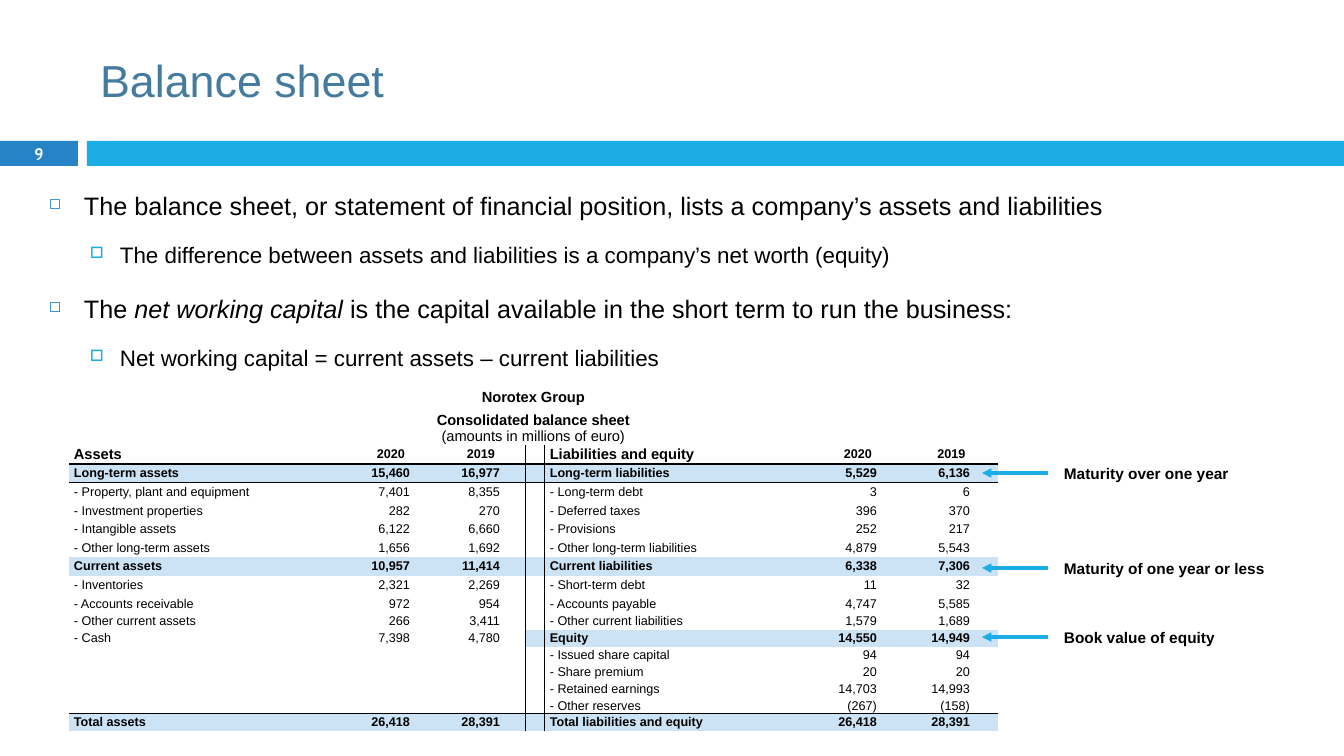
from lxml.etree import SubElement
from pptx import Presentation
from pptx.dml.color import RGBColor
from pptx.enum.shapes import MSO_CONNECTOR, MSO_SHAPE
from pptx.enum.text import MSO_ANCHOR, PP_ALIGN
from pptx.oxml.ns import qn
from pptx.util import Pt

BLUE = RGBColor(0x26, 0x83, 0xC6)
CYAN = RGBColor(0x1C, 0xAD, 0xE4)
TITLE_BLUE = RGBColor(0x45, 0x7B, 0x9E)
PALE = RGBColor(0xCC, 0xE3, 0xF5)
BLACK = RGBColor(0, 0, 0)
WHITE = RGBColor(0xFF, 0xFF, 0xFF)

# Content: (level, [(text, italic), ...])
BULLETS = [
    (0, [("The balance sheet, or statement of financial position, lists a company’s assets and liabilities", False)]),
    (1, [("The difference between assets and liabilities is a company’s net worth (equity)", False)]),
    (0, [("The ", False), ("net working capital ", True),
         ("is the capital available in the short term to run the business:", False)]),
    (1, [("Net working capital = current assets – current liabilities", False)]),
]
# Per level: size, space before, left indent px, hanging px, bullet, its colour and size
LEVELS = [(18, 7, 35, 35, "◻", BLUE, 60), (16, 5.5, 71, 30, "□", CYAN, 70)]

COMPANY = "Norotex Group"
SUBTITLE = ["Consolidated balance sheet", "(amounts in millions of euro)"]
HEADER = ("Assets", "2020", "2019")
HEADER_RIGHT = ("Liabilities and equity", "2020", "2019")
ASSETS = [
    ("Long-term assets", "15,460", "16,977"),
    ("- Property, plant and equipment", "7,401", "8,355"),
    ("- Investment properties", "282", "270"),
    ("- Intangible assets", "6,122", "6,660"),
    ("- Other long-term assets", "1,656", "1,692"),
    ("Current assets", "10,957", "11,414"),
    ("- Inventories", "2,321", "2,269"),
    ("- Accounts receivable", "972", "954"),
    ("- Other current assets", "266", "3,411"),
    ("- Cash", "7,398", "4,780"),
    *[("", "", "")] * 4,
    ("Total assets", "26,418", "28,391"),
]
LIABILITIES = [
    ("Long-term liabilities", "5,529", "6,136"),
    ("- Long-term debt", "3", "6"),
    ("- Deferred taxes", "396", "370"),
    ("- Provisions", "252", "217"),
    ("- Other long-term liabilities", "4,879", "5,543"),
    ("Current liabilities", "6,338", "7,306"),
    ("- Short-term debt", "11", "32"),
    ("- Accounts payable", "4,747", "5,585"),
    ("- Other current liabilities", "1,579", "1,689"),
    ("Equity", "14,550", "14,949"),
    ("- Issued share capital", "94", "94"),
    ("- Share premium", "20", "20"),
    ("- Retained earnings", "14,703", "14,993"),
    ("- Other reserves", "(267)", "(158)"),
    ("Total liabilities and equity", "26,418", "28,391"),
]
COLUMNS = [277, 90, 90, 19, 266, 94, 93]
ROWS = [20, 39, 19] + [19, 19, 18, 19, 18, 19, 19, 18] + [17] * 5 + [16, 17]
NOTES = [("Maturity over one year", 473), ("Maturity of one year or less", 568),
         ("Book value of equity", 637)]


def px(length):
    return round(length * 914400 / 100.8)


def style(para, size, bold=False, color=BLACK, align=PP_ALIGN.LEFT, name="Arial"):
    font = para.font
    font.size, font.bold, font.name = Pt(size), bold, name
    font.color.rgb = color
    para.alignment = align


def add_text(left, top, width, height, text=""):
    frame = page.shapes.add_textbox(px(left), px(top), px(width), px(height)).text_frame
    frame.word_wrap = True
    frame.text = text
    return frame


def add_border(cell, side):
    line = SubElement(cell._tc.get_or_add_tcPr(), qn(f"a:ln{side}"), w=str(Pt(1)))
    SubElement(SubElement(line, qn("a:solidFill")), qn("a:srgbClr"), val=str(BLACK))


deck = Presentation()
deck.slide_width, deck.slide_height = px(1344), px(756)
page = deck.slides.add_slide(deck.slide_layouts[5])

# Title and band
title = page.shapes.title
title.left, title.top, title.width, title.height = px(90), px(25), px(1198), px(109)
title.text_frame.text = "Balance sheet"
title.text_frame.vertical_anchor = MSO_ANCHOR.MIDDLE
style(title.text_frame.paragraphs[0], 32, color=TITLE_BLUE)
for left, width, color in [(0, 78, BLUE), (87, 1257, CYAN)]:
    band = page.shapes.add_shape(MSO_SHAPE.RECTANGLE, px(left), px(141), px(width), px(25))
    band.shadow.inherit = False
    band.fill.solid()
    band.fill.fore_color.rgb = color
    band.line.fill.background()
number = add_text(0, 140, 78, 27, "9")
number.vertical_anchor = MSO_ANCHOR.MIDDLE
style(number.paragraphs[0], 11.9, True, WHITE, PP_ALIGN.CENTER, "Cabin")

# Bullets
body = add_text(39, 170, 1114, 210)
for index, (level, spans) in enumerate(BULLETS):
    size, before, indent, hanging, mark, color, scale = LEVELS[level]
    para = body.add_paragraph() if index else body.paragraphs[0]
    para.level = level
    para.line_spacing, para.space_before = 1.5, Pt(before)
    properties = para._p.get_or_add_pPr()
    properties.set("marL", str(px(indent)))
    properties.set("indent", str(-px(hanging)))
    SubElement(SubElement(properties, qn("a:buClr")), qn("a:srgbClr"), val=str(color))
    SubElement(properties, qn("a:buSzPct"), val=str(scale * 1000))
    SubElement(properties, qn("a:buChar"), char=mark)
    style(para, size)
    for text, italic in spans:
        span = para.add_run()
        span.text = text
        if italic:
            span.font.italic = True

# Balance sheet table
frame = page.shapes.add_table(len(ROWS), len(COLUMNS), px(69), px(386), px(sum(COLUMNS)), px(sum(ROWS)))
table = frame.table
table.first_row = table.horz_banding = False
NO_STYLE = "{2D5ABB26-0587-4C30-8999-92F81FD0307C}"
table._tbl.tblPr.find(qn("a:tableStyleId")).text = NO_STYLE
for column, width in zip(table.columns, COLUMNS):
    column.width = px(width)
for row, height in zip(table.rows, ROWS):
    row.height = px(height)

lines = [[COMPANY] + [""] * 6, ["\n".join(SUBTITLE)] + [""] * 6]
lines += [[*left, "", *right] for left, right in
          zip([HEADER] + ASSETS, [HEADER_RIGHT] + LIABILITIES)]
for r, texts in enumerate(lines):
    for c, text in enumerate(texts):
        cell = table.cell(r, c)
        caption, header = r < 2, r == 2
        label = texts[0 if c < 3 else 4]
        strong = not header and not caption and label != "" and not label.startswith("-")
        amount = c not in (0, 3, 4)
        cell.text = text
        cell.margin_top = cell.margin_bottom = 0
        cell.margin_left = cell.margin_right = px(5)
        cell.vertical_anchor = MSO_ANCHOR.BOTTOM if caption else MSO_ANCHOR.MIDDLE
        align = PP_ALIGN.LEFT
        if caption or header and amount:
            align = PP_ALIGN.CENTER
        elif amount:
            align = PP_ALIGN.RIGHT
            cell.margin_right = px(26 if c < 3 else 28)
        size = 10.5 if caption or header and not amount else 9
        for index, para in enumerate(cell.text_frame.paragraphs):
            style(para, size, (caption or header or strong) and index == 0, align=align)
            if index:
                para.space_after = Pt(3)
            if not text:
                SubElement(para._p, qn("a:endParaRPr"), sz="900")
        # Centre rule, then rules under the header and above the totals
        if c == 3 and not caption:
            add_border(cell, "L")
        if c == 2 and not caption:
            add_border(cell, "R")
        if r in (3, len(ROWS) - 1):
            add_border(cell, "T")
        if r in (2, len(ROWS) - 2):
            add_border(cell, "B")
        if strong:
            cell.fill.solid()
            cell.fill.fore_color.rgb = PALE
        else:
            cell.fill.background()
for r in range(2):
    table.cell(r, 0).merge(table.cell(r, len(COLUMNS) - 1))

# Notes with arrows
for text, middle in NOTES:
    arrow = page.shapes.add_connector(MSO_CONNECTOR.STRAIGHT, px(1048), px(middle), px(982), px(middle))
    arrow.line.color.rgb = CYAN
    arrow.line.width = Pt(2.25)
    SubElement(arrow.line._get_or_add_ln(), qn("a:tailEnd"), type="triangle")
    SubElement(arrow._element.spPr, qn("a:effectLst"))
    note = add_text(1054, middle - 14, 231, 29, text)
    style(note.paragraphs[0], 11, True)

deck.save("out.pptx")
